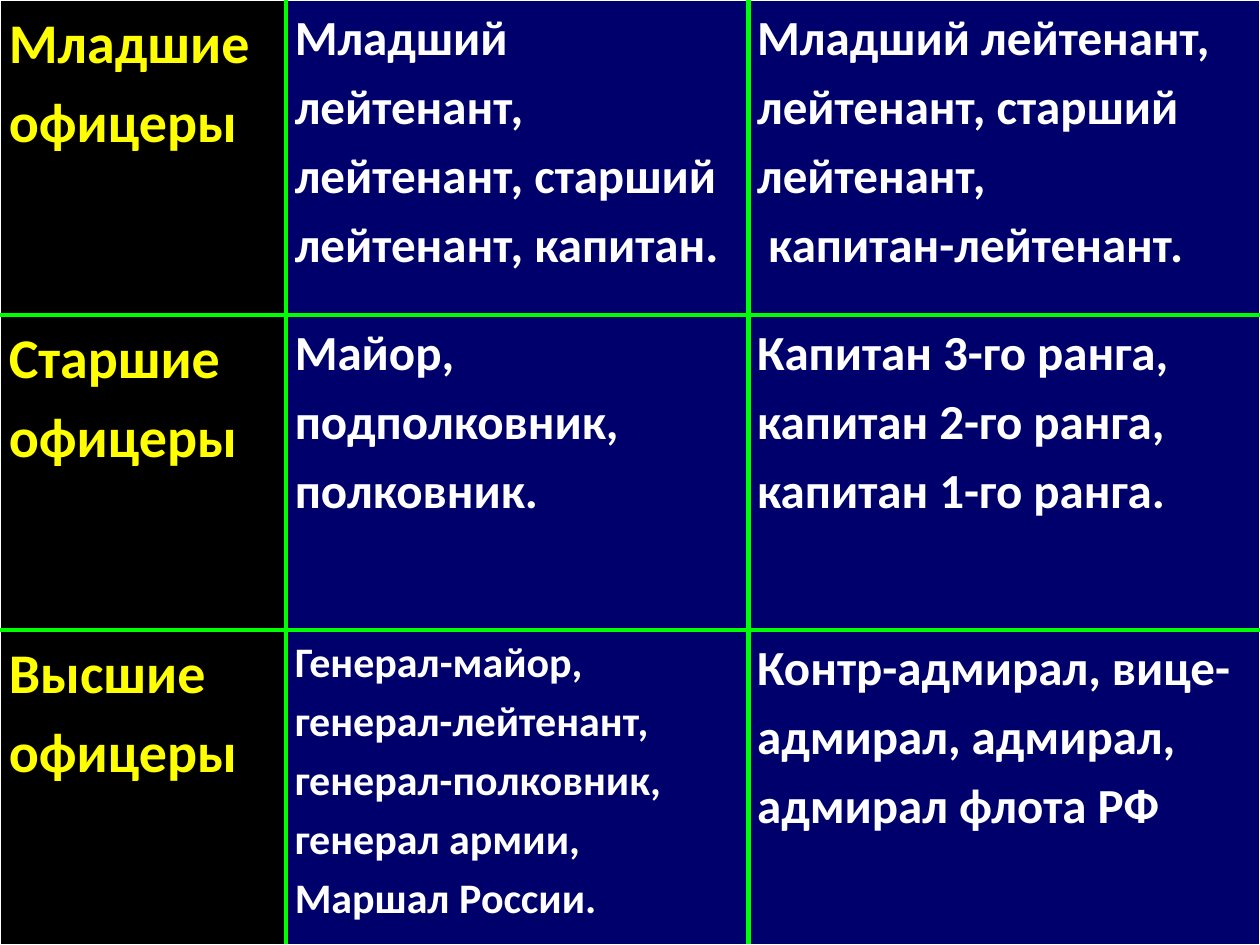
from lxml.etree import SubElement
from pptx import Presentation
from pptx.dml.color import RGBColor
from pptx.oxml.ns import qn
from pptx.util import Inches, Pt

BLACK = RGBColor(0x00, 0x00, 0x00)
NAVY = RGBColor(0x00, 0x00, 0x6C)
YELLOW = RGBColor(0xFF, 0xFF, 0x00)
WHITE = RGBColor(0xFF, 0xFF, 0xFF)
GREEN = RGBColor(0x00, 0xFF, 0x00)

COLS = [2.27, 3.67, 4.06]
RANKS = [
    [
        (32, ["Младшие офицеры"]),
        (28, ["Младший лейтенант, лейтенант, старший лейтенант, капитан."]),
        (28, ["Младший лейтенант, лейтенант, старший лейтенант,",
              " капитан-лейтенант."]),
    ],
    [
        (32, ["Старшие офицеры"]),
        (28, ["Майор, подполковник, полковник."]),
        (28, ["Капитан 3-го ранга, капитан 2-го ранга, капитан 1-го ранга."]),
    ],
    [
        (32, ["Высшие офицеры"]),
        (24, ["Генерал-майор, генерал-лейтенант, генерал-полковник, "
              "генерал армии, Маршал России."]),
        (28, ["Контр-адмирал, вице-адмирал, адмирал, адмирал флота РФ"]),
    ],
]


class Deck:
    """Holds the text style and the current slide, and draws tables on it."""

    font = "Calibri"
    space = 1.15
    inset = Inches(0.07)

    def __init__(self, show):
        self.slide = show.slides.add_slide(show.slide_layouts[6])

    def border(self, cell, side, outer):
        color, width = (WHITE, 1) if outer else (GREEN, 3)
        line = SubElement(cell._tc.get_or_add_tcPr(), qn(f"a:ln{side}"), w=str(Pt(width)))
        fill = SubElement(line, qn("a:solidFill"))
        SubElement(fill, qn("a:srgbClr"), val=str(color))

    def text(self, cell, size, lines, color):
        cell.margin_left = cell.margin_right = self.inset
        cell.margin_top = cell.margin_bottom = 0
        frame = cell.text_frame
        for i, line in enumerate(lines):
            par = frame.add_paragraph() if i else frame.paragraphs[0]
            par.line_spacing = self.space
            run = par.add_run()
            run.text = line
            run.font.name = self.font
            run.font.size = Pt(size)
            run.font.bold = True
            run.font.color.rgb = color

    def table(self, rows, cols, width, height):
        count, span = len(rows), len(cols)
        grid = self.slide.shapes.add_table(count, span, 0, 0, width, height).table
        grid.first_row = grid.horz_banding = False
        for col, size in zip(grid.columns, cols):
            col.width = Inches(size)
        for r, row in enumerate(rows):
            for c, (size, lines) in enumerate(row):
                cell = grid.cell(r, c)
                edges = {"L": c == 0, "R": c == span - 1, "T": r == 0, "B": r == count - 1}
                for side, outer in edges.items():
                    self.border(cell, side, outer)
                cell.fill.solid()
                cell.fill.fore_color.rgb = NAVY if c else BLACK
                self.text(cell, size, lines, WHITE if c else YELLOW)


def main():
    show = Presentation()
    show.slide_width, show.slide_height = Inches(10), Inches(7.5)
    deck = Deck(show)
    deck.table(RANKS, COLS, show.slide_width, show.slide_height)
    show.save("out.pptx")


if __name__ == "__main__":
    main()
